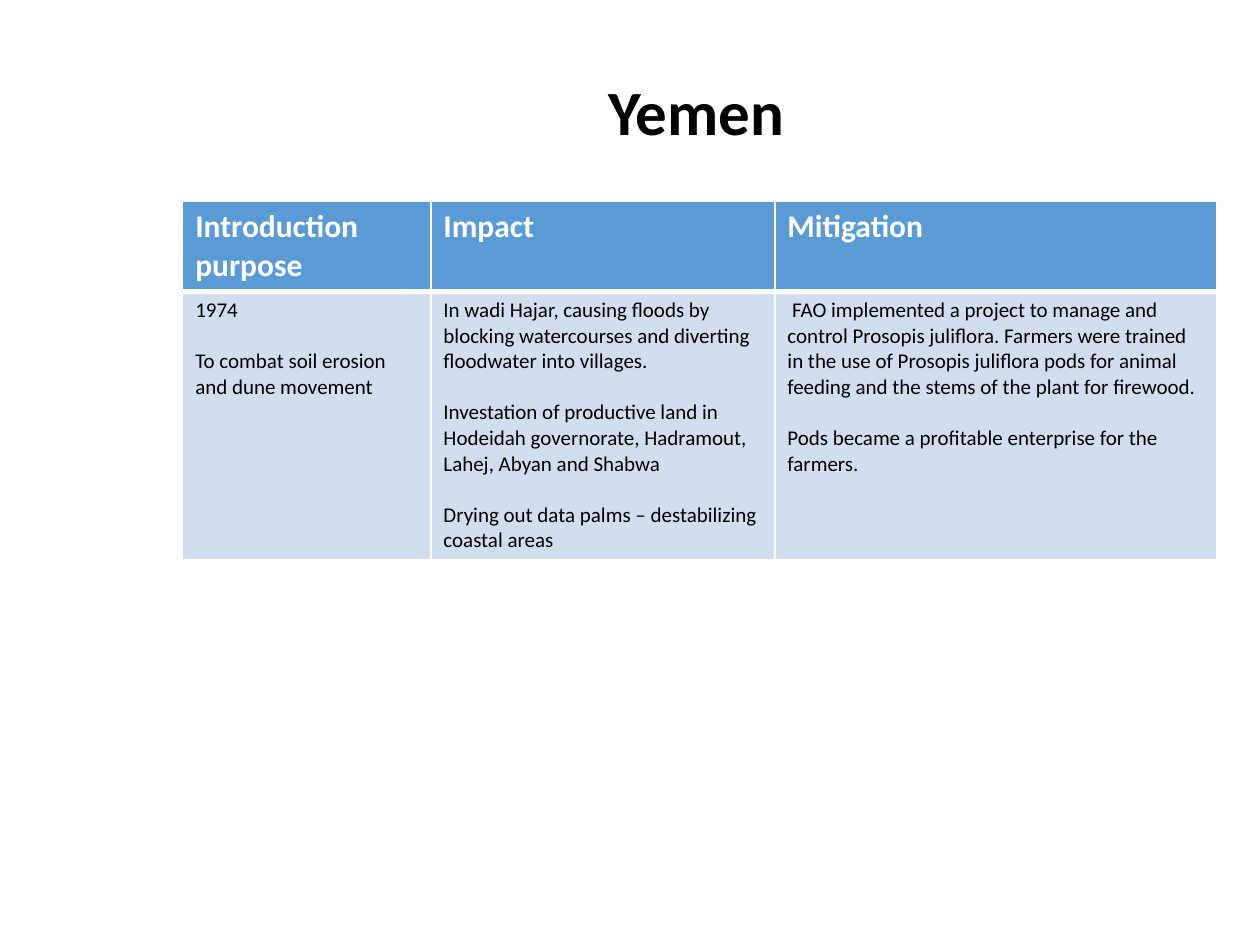
"""Build the Yemen slide: a title above a three-column table."""
import dataclasses

import lxml.etree
import pptx
import pptx.dml.color
import pptx.enum.text
import pptx.oxml.ns
import pptx.util

Pt = pptx.util.Pt
RGB = pptx.dml.color.RGBColor.from_string


@dataclasses.dataclass(frozen=True)
class Theme:
    font: str = "Calibri"
    text: str = "000000"
    white: str = "FFFFFF"
    header_fill: str = "5B9BD5"
    body_fill: str = "D2DEEF"
    title_size: int = 36
    header_size: int = 18
    body_size: int = 12
    paragraph_gap: float = 14.65
    thin: int = 1
    thick: int = 3


THEME = Theme()
COLUMN_WIDTHS = (141.84, 196.56, 252.72)
ROW_HEIGHTS = (51.2, 153.7)
HEADERS = ("Introduction purpose", "Impact", "Mitigation")
BODY = (
    ("1974", "To combat soil erosion and dune movement"),
    (
        "In wadi Hajar, causing floods by blocking watercourses and diverting "
        "floodwater into villages.",
        "Investation of productive land in Hodeidah governorate, Hadramout, "
        "Lahej, Abyan and Shabwa",
        "Drying out data palms – destabilizing coastal areas",
    ),
    (
        " FAO implemented a project to manage and control Prosopis juliflora. "
        "Farmers were trained in the use of Prosopis juliflora pods for animal "
        "feeding and the stems of the plant for firewood.",
        "Pods became a profitable enterprise for the farmers.",
    ),
)


def write(tf, texts, size, color, bold=False):
    """Fill a text frame with evenly spaced paragraphs."""
    for i, text in enumerate(texts):
        p = tf.add_paragraph() if i else tf.paragraphs[0]
        p.text = text
        p.space_before = Pt(THEME.paragraph_gap if i else 0)
        p.font.name = THEME.font
        p.font.size = Pt(size)
        p.font.bold = bold
        p.font.color.rgb = RGB(color)


def set_borders(cell, top, bottom):
    """Give a cell white borders with thin sides."""
    qn = pptx.oxml.ns.qn
    tcPr = cell._tc.get_or_add_tcPr()
    widths = {"lnL": THEME.thin, "lnR": THEME.thin, "lnT": top, "lnB": bottom}
    for tag, width in widths.items():
        ln = lxml.etree.SubElement(tcPr, qn(f"a:{tag}"), w=str(Pt(width)))
        fill = lxml.etree.SubElement(ln, qn("a:solidFill"))
        lxml.etree.SubElement(fill, qn("a:srgbClr"), val=THEME.white)


def style_cell(cell, fill, top, bottom):
    """Set the borders and fill of a cell."""
    set_borders(cell, top, bottom)
    cell.fill.solid()
    cell.fill.fore_color.rgb = RGB(fill)


def add_title(s, text):
    """Add the centred slide title."""
    sp = s.shapes.add_textbox(Pt(98.64), Pt(13.68), Pt(598.32), Pt(104.4))
    tf = sp.text_frame
    tf.word_wrap = True
    tf.vertical_anchor = pptx.enum.text.MSO_ANCHOR.MIDDLE
    write(tf, [text], THEME.title_size, THEME.text, bold=True)
    p = tf.paragraphs[0]
    p.alignment = pptx.enum.text.PP_ALIGN.CENTER
    p.line_spacing = 0.9


def add_table(s):
    """Add the table of purpose, impact and mitigation."""
    table = s.shapes.add_table(
        len(ROW_HEIGHTS), len(COLUMN_WIDTHS), Pt(104.4), Pt(115.2),
        Pt(sum(COLUMN_WIDTHS)), Pt(sum(ROW_HEIGHTS)),
    ).table
    for row, height in zip(table.rows, ROW_HEIGHTS):
        row.height = Pt(height)
    for i, (width, header, body) in enumerate(zip(COLUMN_WIDTHS, HEADERS, BODY)):
        table.columns[i].width = Pt(width)
        head, cell = table.cell(0, i), table.cell(1, i)
        style_cell(head, THEME.header_fill, THEME.thin, THEME.thick)
        style_cell(cell, THEME.body_fill, THEME.thick, THEME.thin)
        write(head.text_frame, [header], THEME.header_size, THEME.white, bold=True)
        write(cell.text_frame, body, THEME.body_size, THEME.text)


def main():
    """Build and save the slide."""
    prs = pptx.Presentation()
    prs.slide_width, prs.slide_height = Pt(720), Pt(540)
    s = prs.slides.add_slide(prs.slide_layouts[6])
    add_table(s)
    add_title(s, "Yemen")
    prs.save("out.pptx")


if __name__ == "__main__":
    main()
